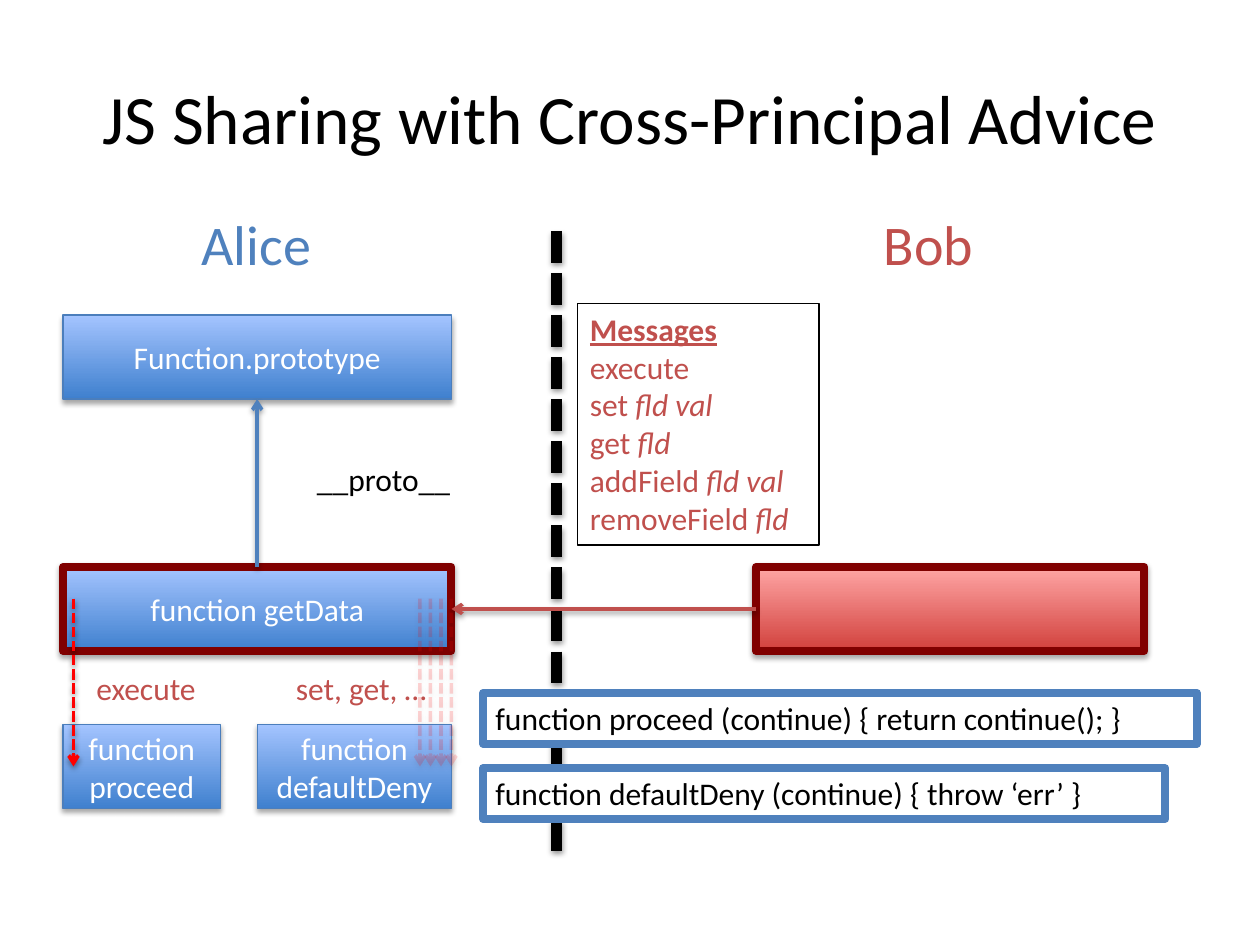
from dataclasses import dataclass

from lxml import etree
from pptx import Presentation
from pptx.dml.color import RGBColor
from pptx.enum import dml, shapes, text
from pptx.oxml import ns
from pptx.util import Pt

BLACK = RGBColor(0x00, 0x00, 0x00)
WHITE = RGBColor(0xFF, 0xFF, 0xFF)
BLUE = RGBColor(0x4F, 0x81, 0xBD)
BLUE_EDGE = RGBColor(0x4B, 0x7E, 0xBC)
RED = RGBColor(0xC0, 0x50, 0x4D)
PURE_RED = RGBColor(0xFF, 0x00, 0x00)
MAROON = RGBColor(0x80, 0x00, 0x00)
BLUE_GRADIENT = (RGBColor(0x3F, 0x80, 0xCE), RGBColor(0xA4, 0xC4, 0xFF))
RED_GRADIENT = (RGBColor(0xD1, 0x40, 0x3C), RGBColor(0xFF, 0xA6, 0xA5))

FONT = "Calibri"
BOX_HEIGHT = 48
LABEL_HEIGHT = 29


@dataclass(frozen=True)
class Span:
    words: str
    bold: bool = False
    italic: bool = False
    underline: bool = False


@dataclass(frozen=True)
class Box:
    words: str
    left: float
    top: float
    width: float
    gradient: tuple = BLUE_GRADIENT
    edge: RGBColor = BLUE_EDGE
    weight: float = 0.75


@dataclass(frozen=True)
class Label:
    words: str
    left: float
    top: float
    width: float
    color: RGBColor = BLACK
    size: float = 18
    height: float = LABEL_HEIGHT
    wrap: bool = True


@dataclass(frozen=True)
class Stroke:
    start: tuple
    end: tuple
    color: RGBColor
    weight: float = 2
    dashed: bool = False
    arrow: bool = True
    opacity: int = 100


def child(parent, tag: str, **attributes):
    return etree.SubElement(parent, ns.qn(tag), **attributes)


def write(frame, paragraphs, *, size=18, color=BLACK, align=None,
          anchor=text.MSO_ANCHOR.TOP, wrap=True) -> None:
    """Fill a frame with paragraphs, each a string or a list of Spans."""
    frame.word_wrap = wrap
    frame.vertical_anchor = anchor
    for index, content in enumerate(paragraphs):
        paragraph = frame.add_paragraph() if index else frame.paragraphs[0]
        paragraph.alignment = align
        for span in [Span(content)] if isinstance(content, str) else content:
            if span.words == "\n":
                paragraph.add_line_break()
                continue
            run = paragraph.add_run()
            run.text = span.words
            font = run.font
            font.name, font.size, font.color.rgb = FONT, Pt(size), color
            font.bold, font.italic = span.bold, span.italic
            font.underline = span.underline


def cast_shadow(effects, strength: int, distance: float) -> None:
    shadow = child(effects, "a:outerShdw", blurRad=str(Pt(3.1)),
                   dist=str(Pt(distance)), dir="5400000", rotWithShape="0")
    black = child(shadow, "a:srgbClr", val="000000")
    child(black, "a:alpha", val=str(strength * 1000))


def add_rectangle(slide, left, top, width, height, edge, weight):
    rectangle = slide.shapes.add_shape(
        shapes.MSO_SHAPE.RECTANGLE, Pt(left), Pt(top), Pt(width), Pt(height))
    rectangle.shadow.inherit = False
    rectangle.line.color.rgb = edge
    rectangle.line.width = Pt(weight)
    return rectangle


def draw_box(slide, box: Box) -> None:
    rectangle = add_rectangle(slide, box.left, box.top, box.width, BOX_HEIGHT,
                              box.edge, box.weight)
    fill = rectangle.fill
    fill.gradient()
    fill.gradient_angle = 90
    for stop, color, position in zip(fill.gradient_stops, box.gradient, (0, 1)):
        stop.color.rgb = color
        stop.position = position
    cast_shadow(rectangle.element.spPr.find(ns.qn("a:effectLst")), 35, 1.8)
    if box.words:
        write(rectangle.text_frame, [box.words], color=WHITE,
              align=text.PP_ALIGN.CENTER, anchor=text.MSO_ANCHOR.MIDDLE)


def draw_label(slide, label: Label) -> None:
    area = slide.shapes.add_textbox(Pt(label.left), Pt(label.top),
                                    Pt(label.width), Pt(label.height))
    write(area.text_frame, [label.words], size=label.size, color=label.color,
          wrap=label.wrap)


def draw_stroke(slide, stroke: Stroke) -> None:
    connector = slide.shapes.add_connector(
        shapes.MSO_CONNECTOR.STRAIGHT, *map(Pt, stroke.start + stroke.end))
    line = connector.line
    line.color.rgb = stroke.color
    line.width = Pt(stroke.weight)
    if stroke.dashed:
        line.dash_style = dml.MSO_LINE.SQUARE_DOT
    properties = connector.element.spPr
    outline = properties.find(ns.qn("a:ln"))
    if stroke.opacity < 100:
        color = outline.find(".//" + ns.qn("a:srgbClr"))
        child(color, "a:alpha", val=str(stroke.opacity * 1000))
    if stroke.arrow:
        child(outline, "a:tailEnd", type="arrow")
    cast_shadow(child(properties, "a:effectLst"), 38, 1.6)


def draw_messages(slide) -> None:
    panel = add_rectangle(slide, 330, 173.5, 138, 138, BLACK, 0.75)
    panel.fill.background()
    field, pair = Span("fld", italic=True), Span("fld val", italic=True)
    write(panel.text_frame, [
        [Span("Messages", bold=True, underline=True)],
        "execute",
        [Span("set "), pair],
        [Span("get "), field],
        [Span("addField "), pair, Span("\n"), Span("removeField "), field],
    ], color=RED, align=text.PP_ALIGN.LEFT)


def draw_code(slide, code: str, top: float, width: float) -> None:
    panel = add_rectangle(slide, 276, top, width, LABEL_HEIGHT, BLUE, 4.5)
    panel.fill.solid()
    panel.fill.fore_color.rgb = WHITE
    write(panel.text_frame, [code], align=text.PP_ALIGN.LEFT)


def advice_arrow(x: float, opacity: int = 100) -> Stroke:
    return Stroke((x, 342), (x, 438), PURE_RED, dashed=True, opacity=opacity)


def main() -> None:
    deck = Presentation()
    deck.slide_width, deck.slide_height = Pt(720), Pt(540)
    slide = deck.slides.add_slide(deck.slide_layouts[5])

    title = slide.shapes.title
    title.left, title.top, title.width, title.height = map(Pt, (36, 21.6, 648, 90))
    write(title.text_frame, ["JS Sharing with Cross-Principal Advice"], size=39.6,
          align=text.PP_ALIGN.CENTER, anchor=text.MSO_ANCHOR.MIDDLE)

    parts = [
        Box("function getData", 36, 324, 222, edge=MAROON, weight=4.5),
        Box("Function.prototype", 36, 180, 222),
        Stroke((147, 324), (147, 228), BLUE),
        Label("__proto__", 174, 259.5, 156),
        Box("function proceed", 36, 414, 90),
        advice_arrow(42),
        Label("execute", 48, 379, 72, RED, wrap=False),
        Box("function defaultDeny", 147, 414, 111),
        Box("", 432, 324, 222, RED_GRADIENT, MAROON, 4.5),
        Stroke((318, 132), (318, 486), BLACK, 6, dashed=True, arrow=False),
        Stroke((432, 348), (258, 348), RED),
        Label("Alice", 108, 116, 84, BLUE, 32, 46),
        Label("Bob", 498, 116, 84, RED, 32, 46),
        Label("set, get, …", 162, 379, 90, RED, wrap=False),
        *(advice_arrow(240 + 6 * step, opacity=16) for step in range(4)),
    ]
    draw = {Box: draw_box, Label: draw_label, Stroke: draw_stroke}
    for part in parts:
        draw[type(part)](slide, part)

    draw_messages(slide)
    draw_code(slide, "function proceed (continue) { return continue(); }", 396, 408)
    draw_code(slide, "function defaultDeny (continue) { throw ‘err’ }", 439, 390)
    deck.save("out.pptx")


if __name__ == "__main__":
    main()
